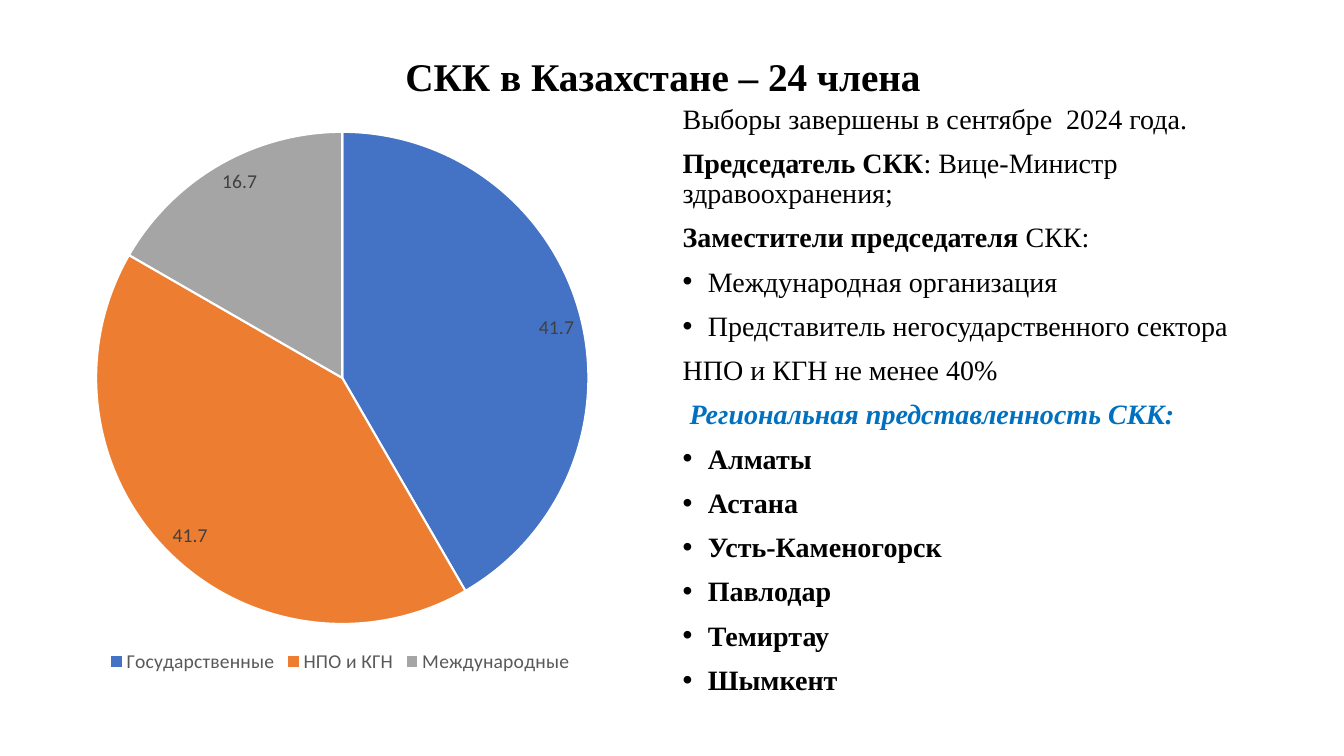
from dataclasses import dataclass

from lxml.etree import SubElement
from pptx import Presentation
from pptx.chart.data import CategoryChartData
from pptx.dml.color import RGBColor
from pptx.enum.chart import XL_CHART_TYPE, XL_LABEL_POSITION, XL_LEGEND_POSITION
from pptx.enum.text import MSO_ANCHOR, MSO_AUTO_SIZE, PP_ALIGN
from pptx.oxml.ns import qn
from pptx.util import Pt

PIXEL = 9144


@dataclass(frozen=True)
class Theme:
    text_font: str = "Times New Roman"
    chart_font: str = "Calibri"
    title_size: int = 28
    body_size: int = 20
    chart_size: int = 14
    text: str = "000000"
    accent: str = "0070C0"
    legend: str = "595959"
    label: str = "404040"
    border: str = "FFFFFF"
    slices: tuple = ("4472C4", "ED7D31", "A5A5A5")


THEME = Theme()
TITLE = "СКК в Казахстане – 24 члена"
MEMBERS = {"Государственные": 41.7, "НПО и КГН": 41.7, "Международные ": 16.7}
CITIES = ("Алматы", "Астана", "Усть-Каменогорск", "Павлодар", "Темиртау", "Шымкент")
PLAIN, BOLD, ACCENT = "plain", "bold", "accent"
LINES = [
    (False, [("Выборы завершены в сентябре  2024 года.", PLAIN)]),
    (False, [("Председатель СКК", BOLD), (": Вице-Министр здравоохранения;", PLAIN)]),
    (False, [("Заместители председателя ", BOLD), ("СКК:", PLAIN)]),
    (True, [("Международная организация", PLAIN)]),
    (True, [("Представитель негосударственного сектора", PLAIN)]),
    (False, [("НПО и КГН не менее 40%", PLAIN)]),
    (False, [(" ", PLAIN), ("Региональная представленность СКК:", ACCENT)]),
    *[(True, [(city, BOLD)]) for city in CITIES],
]


def place(shape, box):
    shape.left, shape.top, shape.width, shape.height = (value * PIXEL for value in box)


def set_font(font, name, size, color):
    font.name = name
    font.size = Pt(size)
    font.color.rgb = RGBColor.from_string(color)


def set_bullet(paragraph, bulleted):
    properties = paragraph._p.get_or_add_pPr()
    indent = 25 * PIXEL if bulleted else 0
    properties.set("marL", str(indent))
    properties.set("indent", str(-indent))
    if bulleted:
        SubElement(properties, qn("a:buFont")).set("typeface", "Arial")
        SubElement(properties, qn("a:buChar")).set("char", "•")
    else:
        SubElement(properties, qn("a:buNone"))


def add_title(slide, box):
    title = slide.shapes.title
    place(title, box)
    frame = title.text_frame
    frame.text = TITLE
    frame.vertical_anchor = MSO_ANCHOR.MIDDLE
    frame.auto_size = MSO_AUTO_SIZE.NONE
    paragraph = frame.paragraphs[0]
    paragraph.alignment = PP_ALIGN.CENTER
    paragraph.line_spacing = 0.9
    set_font(paragraph.font, THEME.text_font, THEME.title_size, THEME.text)
    paragraph.font.bold = True


def add_details(slide, box):
    body = slide.placeholders[1]
    place(body, box)
    frame = body.text_frame
    frame.word_wrap = True
    frame.auto_size = MSO_AUTO_SIZE.NONE
    for index, (bulleted, parts) in enumerate(LINES):
        paragraph = frame.add_paragraph() if index else frame.paragraphs[0]
        paragraph.line_spacing = 0.9
        paragraph.space_before = Pt(10)
        set_bullet(paragraph, bulleted)
        set_font(paragraph.font, THEME.text_font, THEME.body_size, THEME.text)
        paragraph.font.bold = all(style != PLAIN for _, style in parts)
        for text, style in parts:
            run = paragraph.add_run()
            run.text = text
            if len(parts) > 1:
                run.font.bold = style != PLAIN
            if style == ACCENT:
                run.font.italic = True
                run.font.color.rgb = RGBColor.from_string(THEME.accent)


def add_members_chart(slide, box):
    data = CategoryChartData(number_format="0.0")
    data.categories = list(MEMBERS)
    data.add_series("Series 1", list(MEMBERS.values()))
    frame = slide.shapes.add_chart(
        XL_CHART_TYPE.PIE, *(value * PIXEL for value in box), data
    )
    chart = frame.chart
    set_font(chart.font, THEME.chart_font, THEME.chart_size, THEME.text)
    chart.has_title = False
    chart.has_legend = True
    chart.legend.position = XL_LEGEND_POSITION.BOTTOM
    chart.legend.include_in_layout = False
    set_font(chart.legend.font, THEME.chart_font, THEME.chart_size, THEME.legend)

    plot = chart.plots[0]
    plot.vary_by_categories = True
    plot.has_data_labels = True
    labels = plot.data_labels
    labels.show_value = True
    labels.show_percentage = False
    labels.number_format = "0.0"
    labels.number_format_is_linked = False
    labels.position = XL_LABEL_POSITION.INSIDE_END
    set_font(labels.font, THEME.chart_font, THEME.chart_size, THEME.label)

    for index, color in enumerate(THEME.slices):
        slice_format = plot.series[0].points[index].format
        slice_format.fill.solid()
        slice_format.fill.fore_color.rgb = RGBColor.from_string(color)
        slice_format.line.color.rgb = RGBColor.from_string(THEME.border)
        slice_format.line.width = Pt(1.5)


def main():
    presentation = Presentation()
    presentation.slide_width = 1333 * PIXEL
    presentation.slide_height = 750 * PIXEL
    slide = presentation.slides.add_slide(presentation.slide_layouts[1])
    add_title(slide, (41, 39, 1233, 78))
    add_details(slide, (667, 99, 616, 621))
    add_members_chart(slide, (41, 117, 597, 555))
    presentation.save("out.pptx")


if __name__ == "__main__":
    main()
